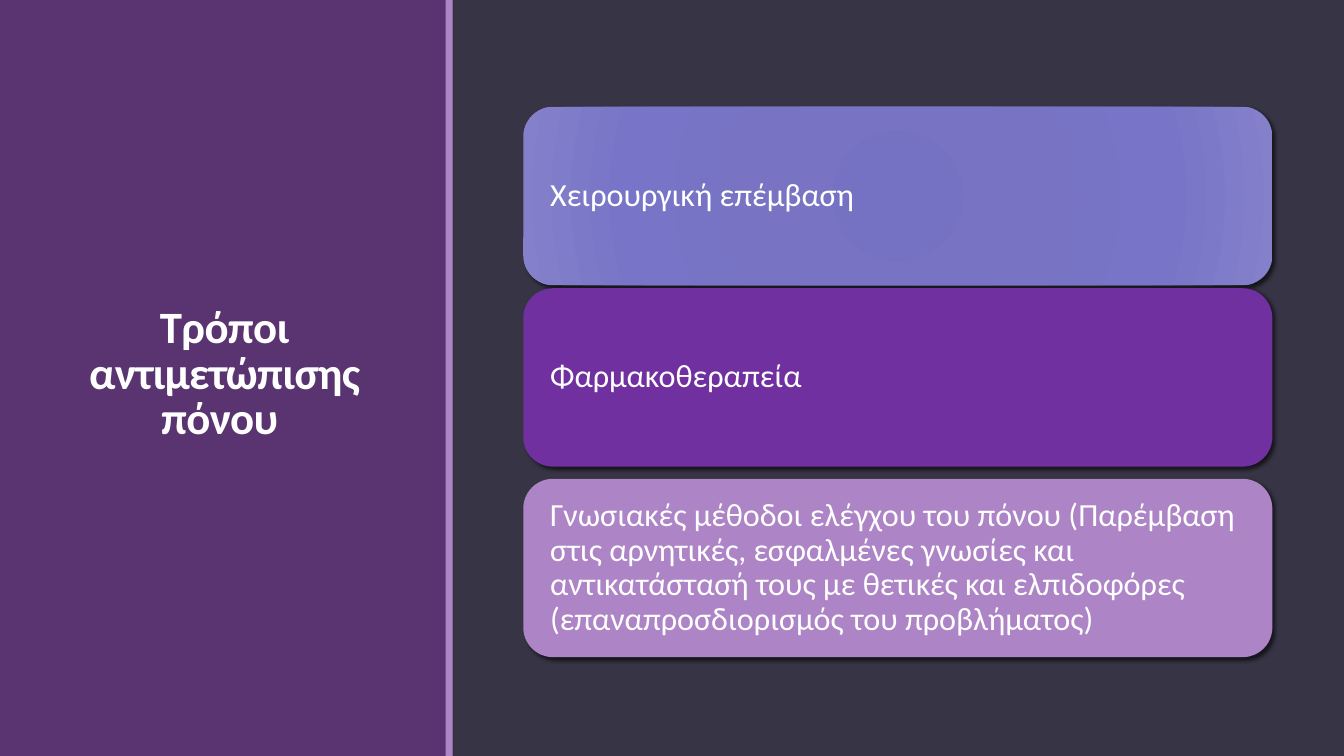
from dataclasses import dataclass

from lxml.etree import SubElement
from pptx import Presentation
from pptx.dml.color import RGBColor
from pptx.enum.shapes import MSO_SHAPE as Preset
from pptx.enum.text import MSO_ANCHOR as Anchor, MSO_AUTO_SIZE as AutoSize, PP_ALIGN as Align
from pptx.oxml import parse_xml
from pptx.oxml.ns import nsdecls, qn
from pptx.shapes.autoshape import Shape
from pptx.slide import Slide
from pptx.text.text import TextFrame
from pptx.util import Inches, Pt

NIGHT = RGBColor(0x37, 0x35, 0x45)
PLUM = RGBColor(0x5A, 0x34, 0x71)
LILAC = RGBColor(0xAD, 0x84, 0xC6)
VIOLET = RGBColor(0x70, 0x30, 0xA0)
PERIWINKLE = RGBColor(0x78, 0x74, 0xC8)
WHITE = RGBColor(0xFF, 0xFF, 0xFF)
BLACK = RGBColor(0, 0, 0)
GLOW = (
    (0, RGBColor(0x75, 0x72, 0xC3)),
    (34, RGBColor(0x78, 0x74, 0xC3)),
    (70, PERIWINKLE),
    (100, RGBColor(0x84, 0x81, 0xCA)),
)
FONT = "Calibri"


@dataclass(frozen=True)
class Method:
    wording: str
    top: float
    color: RGBColor
    glow: tuple[tuple[int, RGBColor], ...] = ()


METHODS = (
    Method("Χειρουργική επέμβαση", 1.06, PERIWINKLE, GLOW),
    Method("Φαρμακοθεραπεία", 2.86, VIOLET),
    Method(
        "Γνωσιακές μέθοδοι ελέγχου του πόνου (Παρέμβαση στις αρνητικές, "
        "εσφαλμένες γνωσίες και αντικατάστασή τους με θετικές και ελπιδοφόρες "
        "(επαναπροσδιορισμός του προβλήματος)",
        4.75,
        LILAC,
    ),
)


def add_block(slide: Slide, preset: Preset, left: float, top: float,
              width: float, height: float, color: RGBColor) -> Shape:
    block = slide.shapes.add_shape(
        preset, Inches(left), Inches(top), Inches(width), Inches(height))
    block.shadow.inherit = False
    block.fill.solid()
    block.fill.fore_color.rgb = color
    block.line.fill.background()
    return block


def write(frame: TextFrame, wording: str, size: int, align: Align,
          spacing: float, bold: bool = False) -> None:
    frame.word_wrap = True
    frame.auto_size = AutoSize.NONE
    frame.vertical_anchor = Anchor.MIDDLE
    paragraph = frame.paragraphs[0]
    paragraph.alignment = align
    paragraph.line_spacing = spacing
    run = paragraph.add_run()
    run.text = wording
    run.font.name = FONT
    run.font.size = Pt(size)
    run.font.bold = bold
    run.font.color.rgb = WHITE


def add_glow(card: Shape, stops: tuple[tuple[int, RGBColor], ...]) -> None:
    stop_list = "".join(
        f'<a:gs pos="{position * 1000}"><a:srgbClr val="{color}"/></a:gs>'
        for position, color in stops)
    gradient = parse_xml(
        f'<a:gradFill {nsdecls("a")} rotWithShape="1"><a:gsLst>{stop_list}</a:gsLst>'
        '<a:path path="circle">'
        '<a:fillToRect l="100000" t="100000" r="100000" b="100000"/>'
        '</a:path></a:gradFill>')
    properties = card.element.spPr
    properties.replace(properties.find(qn("a:solidFill")), gradient)


def add_shadow(card: Shape) -> None:
    effects = card.element.spPr.find(qn("a:effectLst"))
    shadow = SubElement(effects, qn("a:outerShdw"), blurRad=str(Pt(3)),
                        dist=str(Pt(2)), dir="2700000", rotWithShape="0")
    tint = SubElement(shadow, qn("a:srgbClr"), val=str(BLACK))
    SubElement(tint, qn("a:alpha"), val="60000")


def add_method(slide: Slide, method: Method) -> None:
    card = add_block(slide, Preset.ROUNDED_RECTANGLE, 5.19, method.top, 7.43, 1.77, method.color)
    if method.glow:
        add_glow(card, method.glow)
    add_shadow(card)
    frame = card.text_frame
    frame.margin_left = frame.margin_right = Inches(0.18)
    frame.margin_top = frame.margin_bottom = Inches(0.18)
    write(frame, method.wording, 23, Align.LEFT, 0.9)


def add_title(slide: Slide) -> None:
    title = slide.shapes.title
    title.left, title.top = Inches(0.54), Inches(0.57)
    title.width, title.height = Inches(3.37), Inches(6.31)
    write(title.text_frame, "Τρόποι αντιμετώπισης πόνου ", 32, Align.CENTER, 0.85, bold=True)
    title.text_frame.paragraphs[0].runs[0].font._element.set("spc", "-50")
    title.element.getparent().append(title.element)


def main() -> None:
    deck = Presentation()
    deck.slide_width, deck.slide_height = Inches(13.33), Inches(7.5)
    slide = deck.slides.add_slide(deck.slide_layouts[5])
    slide.background.fill.solid()
    slide.background.fill.fore_color.rgb = NIGHT
    add_block(slide, Preset.RECTANGLE, 0, 0, 4.43, 7.5, PLUM)
    add_title(slide)
    add_block(slide, Preset.RECTANGLE, 4.42, 0, 0.07, 7.5, LILAC)
    for method in METHODS:
        add_method(slide, method)
    deck.save("out.pptx")


if __name__ == "__main__":
    main()
